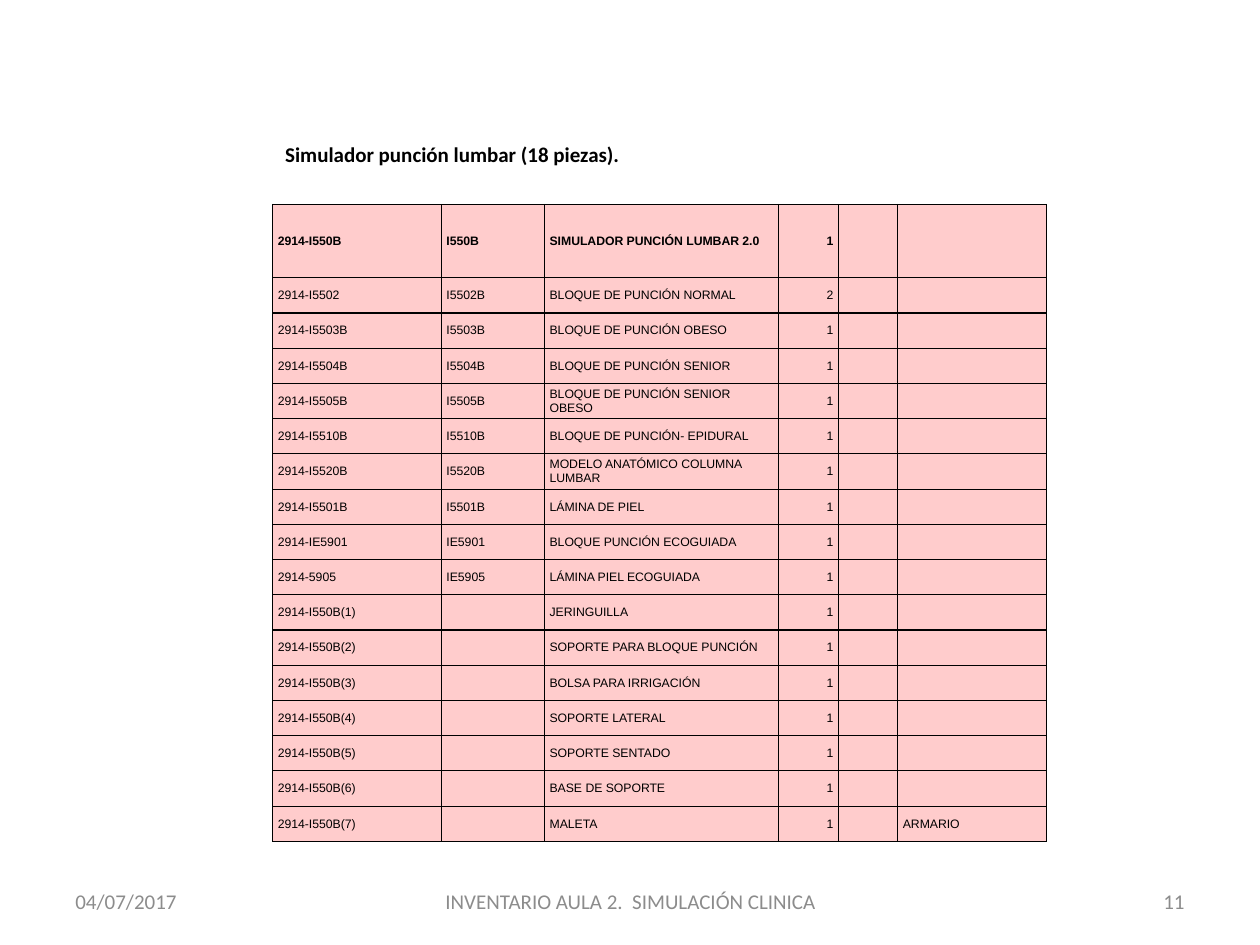
from lxml.etree import SubElement
from pptx import Presentation
from pptx.dml.color import RGBColor
from pptx.enum.text import MSO_ANCHOR, PP_ALIGN
from pptx.oxml.ns import qn
from pptx.util import Cm, Pt

BLACK = RGBColor(0x00, 0x00, 0x00)
GREY = RGBColor(0x8C, 0x8C, 0x8C)
PINK = RGBColor(0xFF, 0xCC, 0xCC)

TITLE = "Simulador punción lumbar (18 piezas)."
# text, left, width, alignment
FOOTERS = [
    ("04/07/2017", 1.27, 5.92, PP_ALIGN.LEFT),
    ("INVENTARIO AULA 2.  SIMULACIÓN CLINICA", 8.69, 8.05, PP_ALIGN.CENTER),
    ("11", 18.21, 5.92, PP_ALIGN.RIGHT),
]
# reference, code, description, quantity, (unused), location
PIECES = [
    ("2914-I550B", "I550B", "SIMULADOR PUNCIÓN LUMBAR 2.0", "1", "", ""),
    ("2914-I5502", "I5502B", "BLOQUE DE PUNCIÓN NORMAL", "2", "", ""),
    ("2914-I5503B", "I5503B", "BLOQUE DE PUNCIÓN OBESO", "1", "", ""),
    ("2914-I5504B", "I5504B", "BLOQUE DE PUNCIÓN SENIOR", "1", "", ""),
    ("2914-I5505B", "I5505B", "BLOQUE DE PUNCIÓN SENIOR OBESO", "1", "", ""),
    ("2914-I5510B", "I5510B", "BLOQUE DE PUNCIÓN- EPIDURAL", "1", "", ""),
    ("2914-I5520B", "I5520B", "MODELO ANATÓMICO COLUMNA LUMBAR", "1", "", ""),
    ("2914-I5501B", "I5501B", "LÁMINA DE PIEL", "1", "", ""),
    ("2914-IE5901", "IE5901", "BLOQUE PUNCIÓN ECOGUIADA", "1", "", ""),
    ("2914-5905", "IE5905", "LÁMINA PIEL ECOGUIADA", "1", "", ""),
    ("2914-I550B(1)", "", "JERINGUILLA", "1", "", ""),
    ("2914-I550B(2)", "", "SOPORTE PARA BLOQUE PUNCIÓN", "1", "", ""),
    ("2914-I550B(3)", "", "BOLSA PARA IRRIGACIÓN", "1", "", ""),
    ("2914-I550B(4)", "", "SOPORTE LATERAL", "1", "", ""),
    ("2914-I550B(5)", "", "SOPORTE SENTADO", "1", "", ""),
    ("2914-I550B(6)", "", "BASE DE SOPORTE", "1", "", ""),
    ("2914-I550B(7)", "", "MALETA", "1", "", "ARMARIO"),
]
COL_WIDTHS = [3.4, 2.08, 4.72, 1.2, 1.2, 3.0]
FIRST_ROW, ROW = 1.48, 0.71
LEFT, TOP = 5.5, 4.12
QUANTITY = 3


def style_run(r, font, size, color, bold=False):
    r.font.name, r.font.size, r.font.bold = font, Pt(size), bold
    r.font.color.rgb = color


def add_text(s, text, left, top, width, height, color, bold=False,
             align=PP_ALIGN.LEFT, anchor=MSO_ANCHOR.MIDDLE):
    tf = s.shapes.add_textbox(Cm(left), Cm(top), Cm(width), Cm(height)).text_frame
    tf.word_wrap = True
    tf.vertical_anchor = anchor
    tf.text = text
    p = tf.paragraphs[0]
    p.alignment = align
    style_run(p.runs[0], "Calibri", 12, color, bold)


def add_borders(cell):
    tc_pr = cell._tc.get_or_add_tcPr()
    for side in ("a:lnL", "a:lnR", "a:lnT", "a:lnB"):
        ln = SubElement(tc_pr, qn(side), w=str(Pt(0.75)))
        fill = SubElement(ln, qn("a:solidFill"))
        SubElement(fill, qn("a:srgbClr"), val=str(BLACK))


def fill_cell(cell, text, bold, align):
    add_borders(cell)  # the schema wants borders before the fill
    cell.fill.solid()
    cell.fill.fore_color.rgb = PINK
    cell.vertical_anchor = MSO_ANCHOR.MIDDLE
    cell.margin_left = cell.margin_right = Cm(0.1)
    cell.margin_top = cell.margin_bottom = Cm(0.05)
    p = cell.text_frame.paragraphs[0]
    p.alignment = align
    if text:
        p.text = text
        style_run(p.runs[0], "Arial", 7, BLACK, bold)
    else:  # keeps an empty cell from stretching its row
        p._p.get_or_add_endParaRPr().set("sz", "700")


def add_inventory(s):
    heights = [FIRST_ROW] + [ROW] * (len(PIECES) - 1)
    table = s.shapes.add_table(len(PIECES), len(COL_WIDTHS), Cm(LEFT), Cm(TOP),
                               Cm(sum(COL_WIDTHS)), Cm(sum(heights))).table
    table.first_row = table.horz_banding = False
    for column, width in zip(table.columns, COL_WIDTHS):
        column.width = Cm(width)
    for i, (row, height, piece) in enumerate(zip(table.rows, heights, PIECES)):
        row.height = Cm(height)
        for j, (cell, text) in enumerate(zip(row.cells, piece)):
            align = PP_ALIGN.RIGHT if j == QUANTITY else PP_ALIGN.LEFT
            fill_cell(cell, text, i == 0, align)


def main():
    prs = Presentation()
    prs.slide_width, prs.slide_height = Cm(25.4), Cm(19.05)
    s = prs.slides.add_slide(prs.slide_layouts[6])
    for text, left, width, align in FOOTERS:
        add_text(s, text, left, 17.65, width, 1.02, GREY, align=align)
    add_inventory(s)
    add_text(s, TITLE, LEFT, 2.72, sum(COL_WIDTHS), 0.77, BLACK, bold=True,
             anchor=MSO_ANCHOR.TOP)
    prs.save("out.pptx")


if __name__ == "__main__":
    main()
